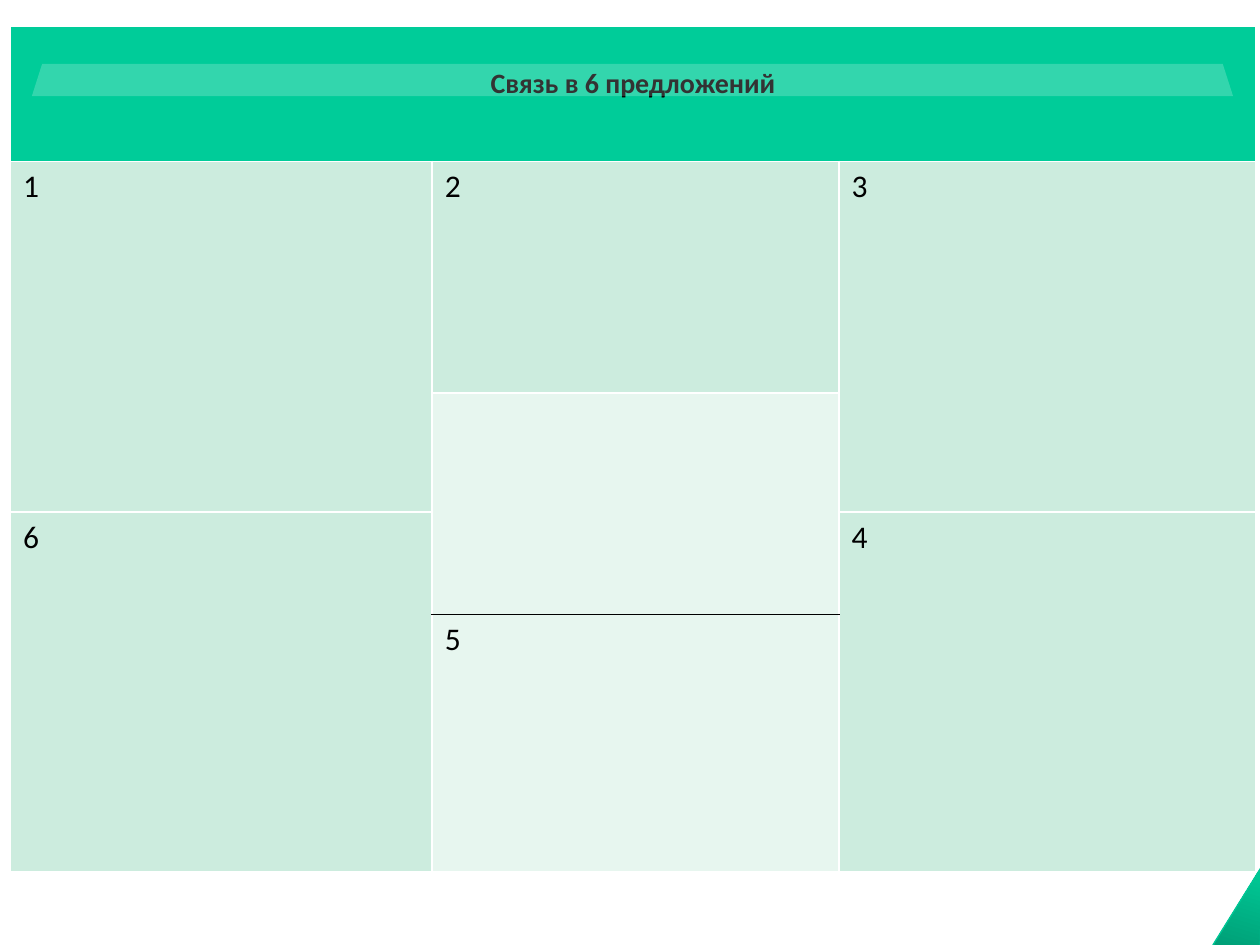
import copy

import lxml.etree
import pptx
import pptx.dml.color
import pptx.enum.shapes
import pptx.enum.text
import pptx.oxml.ns
import pptx.util

Pt = pptx.util.Pt
qn = pptx.oxml.ns.qn
SHAPES = pptx.enum.shapes.MSO_SHAPE

COLUMN_WIDTHS = [241, 232.5, 238]
ROW_HEIGHTS = [77, 132.5, 68, 58.5, 147]
HEADER, DARK_MINT, PALE_MINT = "00CC99", "CCECDE", "E7F6EF"

# First row and column, last row and column, text, fill
AREAS = [
    (0, 0, 0, 2, "Связь в 6 предложений", HEADER),
    (1, 0, 2, 0, "1", DARK_MINT),
    (1, 1, 1, 1, "2", DARK_MINT),
    (1, 2, 2, 2, "3", DARK_MINT),
    (2, 1, 3, 1, "", PALE_MINT),
    (3, 0, 4, 0, "6", DARK_MINT),
    (3, 2, 4, 2, "4", DARK_MINT),
    (4, 1, 4, 1, "5", PALE_MINT),
]


def color(hex_value):
    return pptx.dml.color.RGBColor.from_string(hex_value)


def set_border(cell, side, hex_value):
    line = lxml.etree.SubElement(cell._tc.get_or_add_tcPr(), qn("a:ln" + side), w=str(Pt(1)))
    fill = lxml.etree.SubElement(line, qn("a:solidFill"))
    lxml.etree.SubElement(fill, qn("a:srgbClr"), val=hex_value)


def style_cell(cell, fill, black_side):
    for side in "LRTB":
        set_border(cell, side, "000000" if side == black_side else "FFFFFF")
    cell.fill.solid()
    cell.fill.fore_color.rgb = color(fill)


def write_cell(cell, text, is_header):
    cell.text_frame.text = text
    paragraph = cell.text_frame.paragraphs[0]
    if is_header:
        cell.margin_top = Pt(23)
        paragraph.alignment = pptx.enum.text.PP_ALIGN.CENTER
    font = paragraph.runs[0].font if text else paragraph.font
    font.name = "Calibri"
    font.size = Pt(16 if is_header else 18)
    font.bold = is_header
    font.color.rgb = color("000000")


def add_sentence_table(slide):
    table = slide.shapes.add_table(
        len(ROW_HEIGHTS), len(COLUMN_WIDTHS), Pt(6), Pt(15.2),
        Pt(sum(COLUMN_WIDTHS)), Pt(sum(ROW_HEIGHTS))).table
    for column, width in zip(table.columns, COLUMN_WIDTHS):
        column.width = Pt(width)
    for row, height in zip(table.rows, ROW_HEIGHTS):
        row.height = Pt(height)
    black_sides = {(3, 1): "B", (4, 1): "T"}
    for top, left, bottom, right, text, fill in AREAS:
        for row in range(top, bottom + 1):
            for column in range(left, right + 1):
                # The line above sentence 5 belongs to the whole merged area
                black_side = black_sides.get((bottom, column))
                style_cell(table.cell(row, column), fill, black_side)
        first = table.cell(top, left)
        if (top, left) != (bottom, right):
            first.merge(table.cell(bottom, right))
        write_cell(first, text, is_header=top == 0)


def add_header_band(slide):
    band = slide.shapes.add_shape(SHAPES.TRAPEZOID, Pt(18.2), Pt(36.5), Pt(686.4), Pt(18.4))
    band.adjustments[0] = 0.32
    band.shadow.inherit = False
    band.line.fill.background()
    band.fill.solid()
    band.fill.fore_color.rgb = color("FFFFFF")
    tint = band.fill._xPr.find(".//" + qn("a:srgbClr"))
    lxml.etree.SubElement(tint, qn("a:alpha"), val="20000")


def add_corner_triangle(slide):
    corner = slide.shapes.add_shape(
        SHAPES.ISOSCELES_TRIANGLE, Pt(699.8), Pt(493.9), Pt(28.1), Pt(51.1))
    corner.rotation = 16.5
    corner.shadow.inherit = False
    corner.line.color.rgb = color("00C896")
    corner.line.width = Pt(0.75)
    corner.fill.gradient()
    corner.fill.gradient_angle = 90
    stop_list = corner.fill._fill._gradFill.find(qn("a:gsLst"))
    stop_list.append(copy.deepcopy(stop_list[-1]))
    shades = [(0, "009872"), (0.8, "00C694"), (1, "00C795")]
    for stop, (position, shade) in zip(corner.fill.gradient_stops, shades):
        stop.position = position
        stop.color.rgb = color(shade)


def main():
    deck = pptx.Presentation()
    deck.slide_width, deck.slide_height = Pt(720), Pt(540)
    slide = deck.slides.add_slide(deck.slide_layouts[6])
    add_sentence_table(slide)
    add_header_band(slide)
    add_corner_triangle(slide)
    deck.save("out.pptx")


if __name__ == "__main__":
    main()
